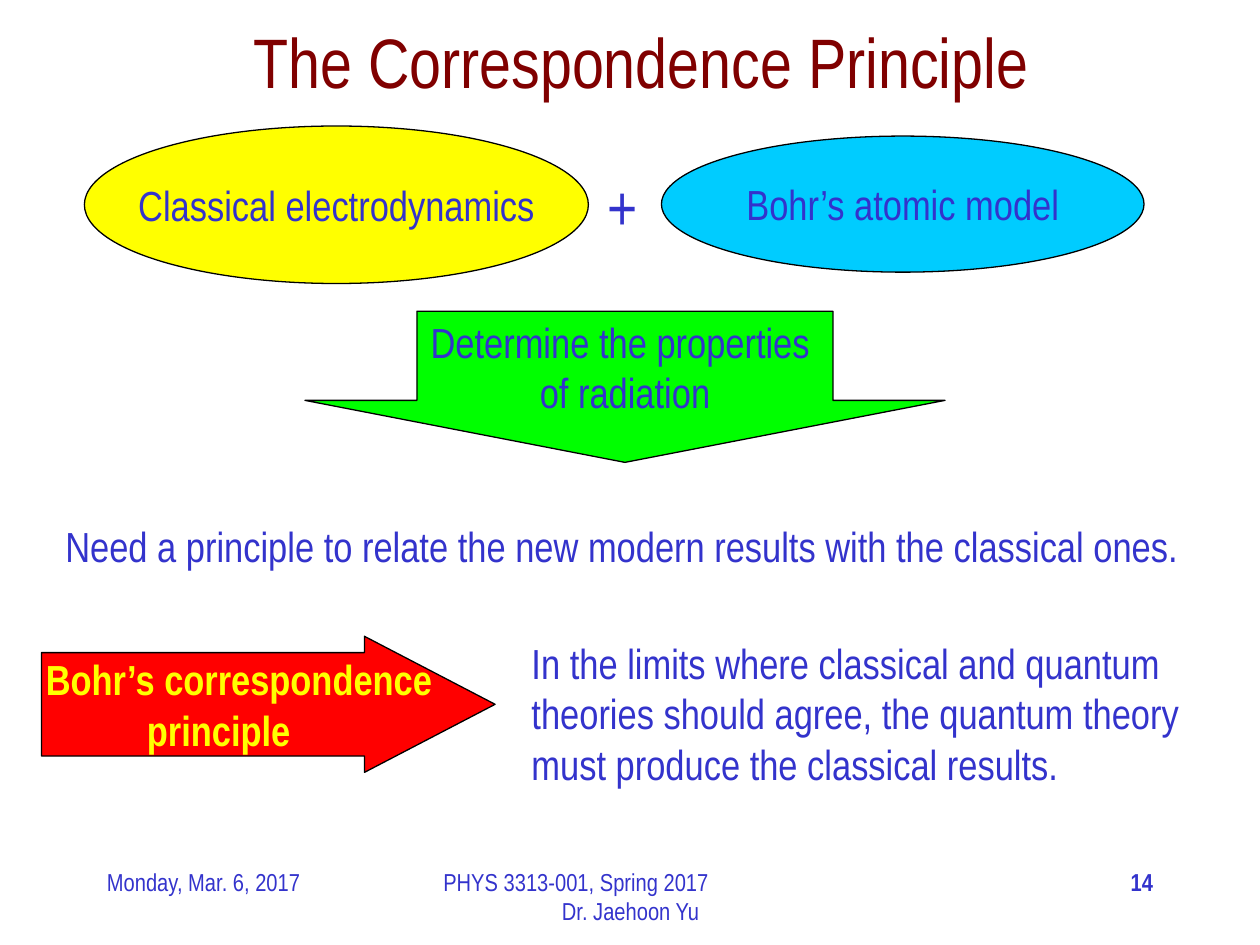
from lxml import etree
from pptx import Presentation
from pptx.dml.color import RGBColor
from pptx.enum import shapes, text
from pptx.util import Inches, Pt

COLORS = {
    "maroon": "800000", "blue": "3333CC", "yellow": "FFFF00", "cyan": "00CCFF",
    "green": "00FF00", "red": "FF0000", "black": "000000",
}
FONT = "Arial Narrow"
LEFT, CENTER, RIGHT = text.PP_ALIGN.LEFT, text.PP_ALIGN.CENTER, text.PP_ALIGN.RIGHT
TOP, MIDDLE = text.MSO_ANCHOR.TOP, text.MSO_ANCHOR.MIDDLE
SHAPE = shapes.MSO_SHAPE


def rgb(name):
    return RGBColor.from_string(COLORS[name])


def write(sp, lines, size=24, color="blue", bold=False, aligns=(LEFT,),
          anchor=TOP, wrap=True, first_indent=0):
    tf = sp.text_frame
    tf.auto_size = text.MSO_AUTO_SIZE.NONE
    tf.word_wrap = wrap
    tf.vertical_anchor = anchor
    for i, line in enumerate(lines):
        p = tf.paragraphs[0] if i == 0 else tf.add_paragraph()
        p.alignment = aligns[i % len(aligns)]
        if i == 0 and first_indent:
            p._p.get_or_add_pPr().set("marL", str(Inches(first_indent)))
        r = p.add_run()
        r.text = line
        r.font.name = FONT
        r.font.size = Pt(size)
        r.font.bold = bold
        r.font.color.rgb = rgb(color)


def add_title(s, box, line):
    sp = s.shapes.title
    sp.left, sp.top, sp.width, sp.height = map(Inches, box)
    write(sp, [line], size=40, color="maroon", aligns=(CENTER,), anchor=MIDDLE)


def add_text(s, box, *lines, **fmt):
    write(s.shapes.add_textbox(*map(Inches, box)), lines, **fmt)


def add_block(s, kind, box, fill, *lines, adjustments=(), **fmt):
    sp = s.shapes.add_shape(kind, *map(Inches, box))
    sp.shadow.inherit = False
    sp.fill.solid()
    sp.fill.fore_color.rgb = rgb(fill)
    sp.line.color.rgb = rgb("black")
    sp.line.width = Pt(0.75)
    for i, value in enumerate(adjustments):
        sp.adjustments[i] = value
    write(sp, lines, aligns=(CENTER,), anchor=MIDDLE, wrap=False, **fmt)


def main():
    prs = Presentation()
    prs.slide_width, prs.slide_height = Inches(10), Inches(7.5)
    s = prs.slides.add_slide(prs.slide_layouts[5])

    add_title(s, (0.5, 0.05, 9.17, 0.86), "The Correspondence Principle")
    add_text(s, (0.42, 4.08, 9.25, 0.58),
             "Need a principle to relate the new modern results with the classical ones.")

    add_block(s, SHAPE.OVAL, (0.67, 1, 4, 1.25), "yellow", "Classical electrodynamics")
    add_block(s, SHAPE.OVAL, (5.25, 1.08, 3.83, 1.08), "cyan", "Bohr’s atomic model")
    add_block(s, SHAPE.DOWN_ARROW, (2.42, 2.47, 5.08, 1.2), "green",
              "Determine the properties ", "of radiation", adjustments=(0.65, 0.41))
    add_block(s, SHAPE.RIGHT_ARROW, (0.33, 5.05, 3.6, 1.08), "red",
              "Bohr’s correspondence ", "principle", adjustments=(0.76, 0.96),
              color="yellow", bold=True, first_indent=0.4)

    add_text(s, (4.12, 5.01, 5.63, 1.31),
             "In the limits where classical and quantum theories should agree, "
             "the quantum theory must produce the classical results.")
    add_text(s, (4.72, 1.28, 0.45, 0.71), "+", size=36, wrap=False)

    add_text(s, (0.75, 6.83, 2.08, 0.5), "Monday, Mar. 6, 2017", size=14)
    add_text(s, (7.17, 6.83, 2.08, 0.5), "14", size=14, bold=True, aligns=(RIGHT,))
    add_text(s, (3.42, 6.83, 3.17, 0.5), "PHYS 3313-001, Spring 2017", "Dr. Jaehoon Yu",
             size=14, aligns=(LEFT, CENTER))

    prs.save("out.pptx")


if __name__ == "__main__":
    main()
